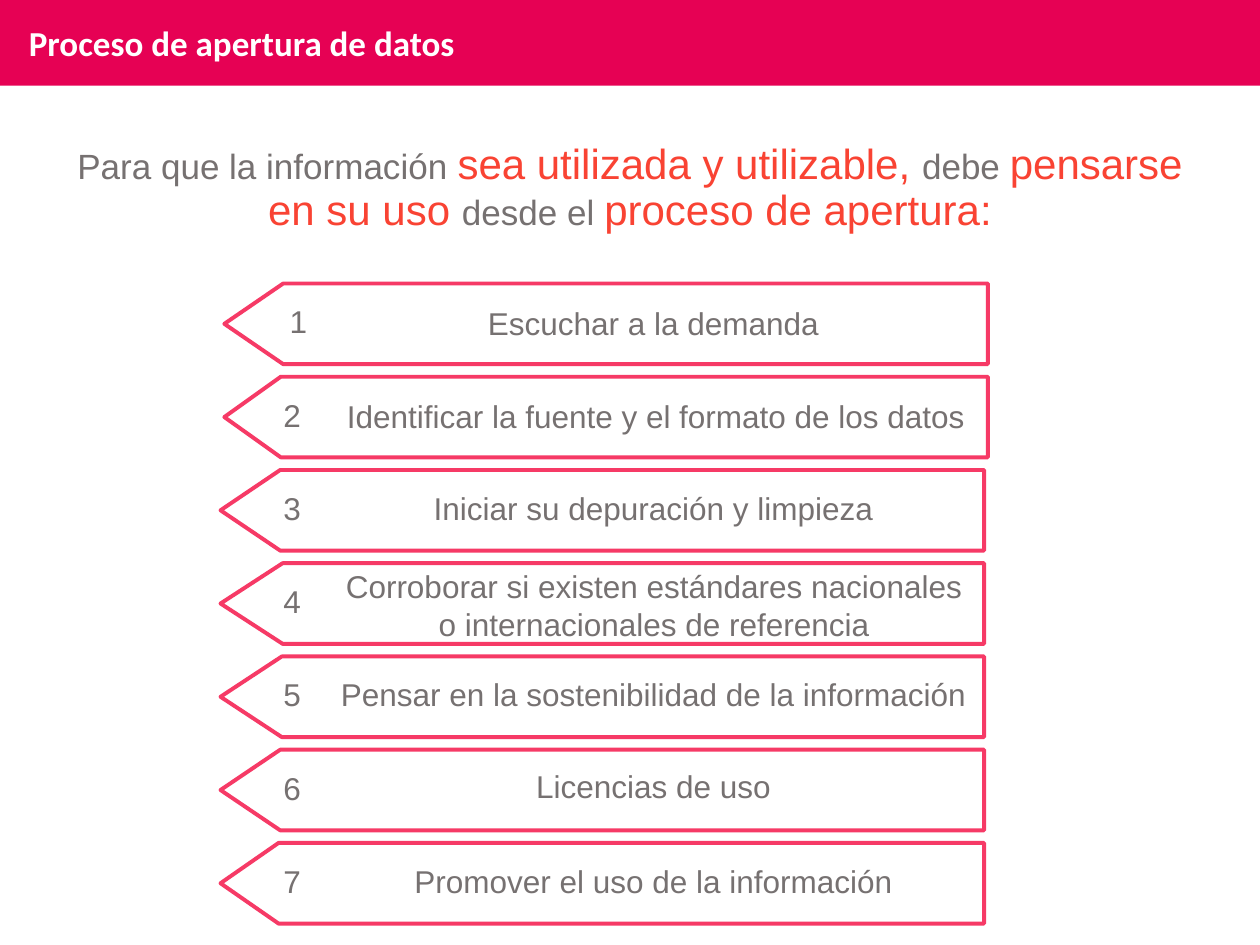
"""Build the slide on the process of opening up data."""
from pptx import Presentation
from pptx.dml.color import RGBColor
from pptx.enum import shapes, text
from pptx.util import Inches, Pt

MAGENTA = RGBColor(0xE6, 0x01, 0x54)
PINK = RGBColor(0xF6, 0x3A, 0x66)
RED = RGBColor(0xF9, 0x43, 0x33)
GRAY = RGBColor(0x76, 0x71, 0x71)
WHITE = RGBColor(0xFF, 0xFF, 0xFF)

STEPS = [
    # step, arrow left, point ratio, number left, label box
    ("Escuchar a la demanda", 1.78, 0.73, 2.2, (2.59, 0.16, 5.19, 0.3)),
    ("Identificar la fuente y el formato de los datos", 1.78, 0.7, 2.15, (2.61, 0.16, 5.19, 0.3)),
    ("Iniciar su depuración y limpieza", 1.75, 0.74, 2.15, (2.59, 0.15, 5.19, 0.3)),
    ("Corroborar si existen estándares nacionales o internacionales de referencia",
     1.75, 0.77, 2.15, (2.68, 0.03, 5.02, 0.6)),
    ("Pensar en la sostenibilidad de la información", 1.75, 0.76, 2.15, (2.59, 0.15, 5.19, 0.3)),
    ("Licencias de uso", 1.75, 0.74, 2.15, (2.59, 0.14, 5.19, 0.3)),
    ("Promover el uso de la información", 1.75, 0.72, 2.15, (2.59, 0.15, 5.19, 0.3)),
]
FIRST_TOP, PITCH = 2.25, 0.74

INTRO = [
    ("Para que la información ", 20, GRAY),
    ("sea utilizada y utilizable, ", 24, RED),
    ("debe ", 20, GRAY),
    ("pensarse en su uso ", 24, RED),
    ("desde el ", 20, GRAY),
    ("proceso de apertura:", 24, RED),
]

prs = Presentation()
prs.slide_width, prs.slide_height = Inches(10), Inches(7.5)
slide = prs.slides.add_slide(prs.slide_layouts[6])


def add_text(box, content, size, color, font="Arial", wrap=True):
    frame = slide.shapes.add_textbox(*map(Inches, box)).text_frame
    frame.word_wrap = wrap
    paragraph = frame.paragraphs[0]
    paragraph.text = content
    paragraph.font.name = font
    paragraph.font.size = Pt(size)
    paragraph.font.color.rgb = color
    return frame


def add_shape(kind, left, top, width, height):
    shape = slide.shapes.add_shape(kind, Inches(left), Inches(top), Inches(width), Inches(height))
    shape.shadow.inherit = False
    return shape


band = add_shape(shapes.MSO_SHAPE.RECTANGLE, 0, 0, 10, 0.68)
band.fill.solid()
band.fill.fore_color.rgb = MAGENTA
band.line.fill.background()

title = add_text((0.13, 0.12, 5.78, 0.44), "Proceso de apertura de datos", 20, WHITE, "Calibri")
title.paragraphs[0].font.bold = True

for index, (step, arrow_left, point, number_left, label_box) in enumerate(STEPS):
    top = FIRST_TOP + index * PITCH
    arrow = add_shape(shapes.MSO_SHAPE.PENTAGON, arrow_left, top, 6.06, 0.64)
    arrow.rotation = 180
    arrow.adjustments[0] = point
    arrow.fill.background()
    arrow.line.color.rgb = PINK
    arrow.line.width = Pt(2.25)

    number = add_text((number_left, top + 0.15, 0.34, 0.3), str(index + 1), 18, GRAY, wrap=False)
    left, offset, width, height = label_box
    label = add_text((left, top + offset, width, height), step, 18, GRAY)
    label.margin_left = label.margin_right = 0
    label.paragraphs[0].alignment = text.PP_ALIGN.CENTER
    for frame in (number, label):
        frame.margin_top = frame.margin_bottom = 0
        frame.vertical_anchor = text.MSO_ANCHOR.MIDDLE

intro = slide.shapes.add_textbox(Inches(0.33), Inches(1.09), Inches(9.34), Inches(4.14)).text_frame
intro.word_wrap = True
sentence = intro.paragraphs[0]
sentence.alignment = text.PP_ALIGN.CENTER
sentence.line_spacing = 0.9
sentence.space_before = Pt(10)
sentence.font.name = "Arial"
for words, size, color in INTRO:
    run = sentence.add_run()
    run.text = words
    run.font.size = Pt(size)
    run.font.color.rgb = color

prs.save("out.pptx")
